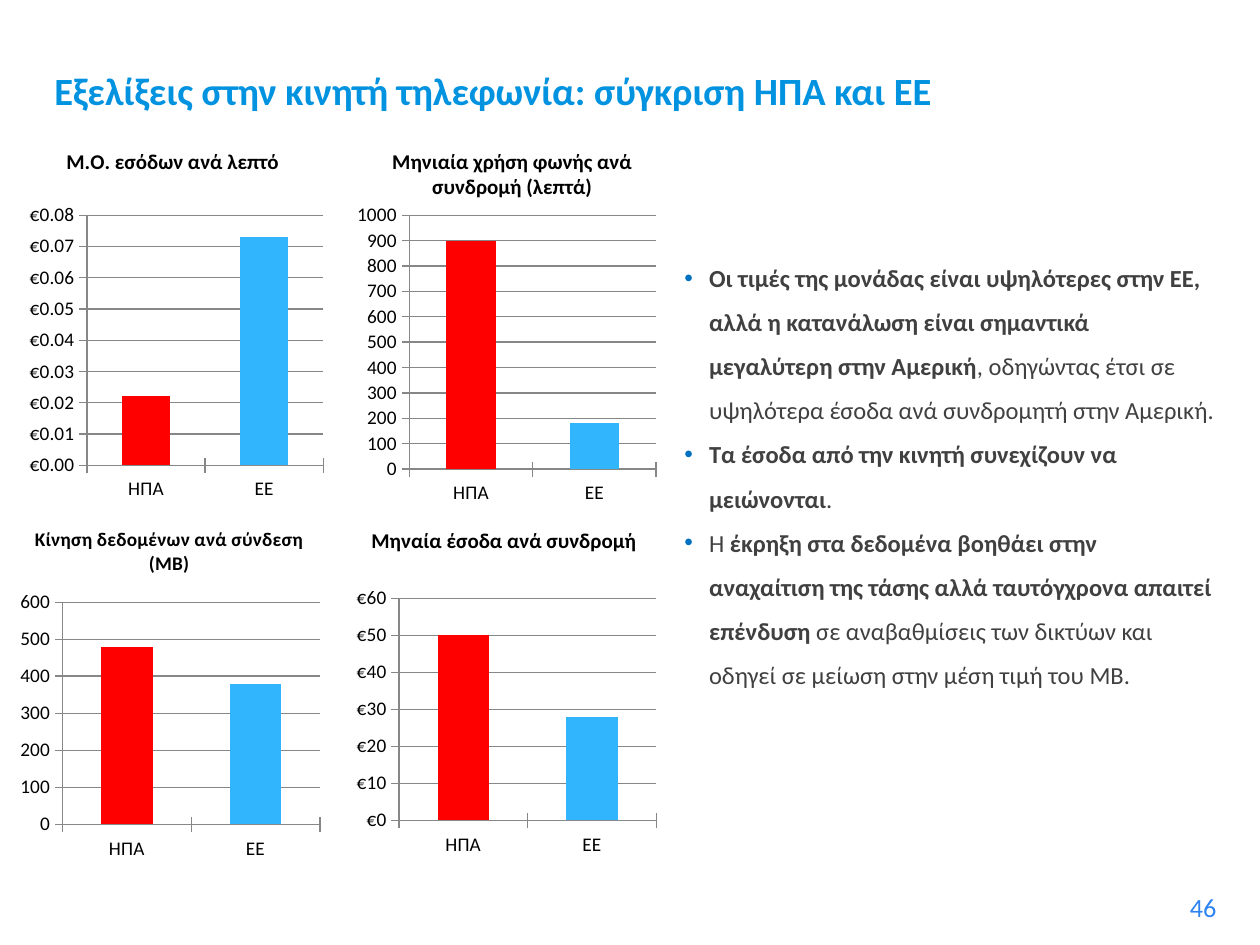
from lxml import etree
from pptx import Presentation
from pptx.chart.data import CategoryChartData
from pptx.dml.color import RGBColor
from pptx.enum.chart import XL_CHART_TYPE, XL_TICK_MARK
from pptx.enum.text import MSO_ANCHOR, MSO_AUTO_SIZE, PP_ALIGN
from pptx.oxml.ns import qn
from pptx.util import Cm, Pt

COLUMNS = XL_CHART_TYPE.COLUMN_CLUSTERED
TICK_CROSS = XL_TICK_MARK.CROSS
TOP, MIDDLE = MSO_ANCHOR.TOP, MSO_ANCHOR.MIDDLE
NO_AUTOFIT = MSO_AUTO_SIZE.NONE
LEFT, RIGHT = PP_ALIGN.LEFT, PP_ALIGN.RIGHT

FONT = "Calibri"
RED, BLUE, GRID = "FF0000", "31B6FD", "878787"
REGIONS = ["ΗΠΑ", "ΕΕ"]

# title, title size, title position, values, axis maximum, axis step, format, plot area
CHARTS = [
    ("Μ.Ο. εσόδων ανά λεπτό", 12, (0.18, 0.07), (0.022, 0.073),
     0.08, 0.01, '"€"#,##0.00', (0.25, 0.25, 0.68, 0.63)),
    ("Μηνιαία χρήση φωνής ανά συνδρομή (λεπτά)", 12, (0.15, 0.07), (900, 180),
     1000, 100, "General", (0.21, 0.25, 0.71, 0.64)),
    ("Κίνηση δεδομένων ανά σύνδεση (ΜΒ)", 11, (0.09, 0.12), (480, 380),
     600, 100, "General", (0.18, 0.32, 0.74, 0.56)),
    ("Μηναία έσοδα ανά συνδρομή", 12, (0.09, 0.12), (50, 28),
     60, 10, '"€"#,##0', (0.18, 0.31, 0.74, 0.56)),
]

# each point is a list of (text, bold)
POINTS = [
    [("Οι τιμές της μονάδας είναι υψηλότερες στην ΕΕ, αλλά η κατανάλωση είναι "
      "σημαντικά μεγαλύτερη στην Αμερική", True),
     (", οδηγώντας έτσι σε υψηλότερα έσοδα ανά συνδρομητή στην Αμερική.", False)],
    [("Τα έσοδα από την κινητή συνεχίζουν να μειώνονται", True), (".", False)],
    [("H ", False),
     ("έκρηξη στα δεδομένα βοηθάει στην αναχαίτιση της τάσης αλλά ταυτόγχρονα "
      "απαιτεί επένδυση ", True),
     ("σε αναβαθμίσεις των δικτύων και οδηγεί σε μείωση στην μέση τιμή του ΜΒ.", False)],
]


def color(value):
    return RGBColor.from_string(value)


def style_font(font, size, value, bold=False):
    font.name, font.size, font.bold = FONT, Pt(size), bold
    font.color.rgb = color(value)


def place(shape, box):
    shape.left, shape.top, shape.width, shape.height = map(Cm, box)


def set_layout(parent, position, index, inner=False):
    """Give a chart part a manual layout, in fractions of the chart."""
    old = parent.find(qn("c:layout"))
    if old is not None:
        parent.remove(old)
    layout = etree.Element(qn("c:layout"))
    manual = etree.SubElement(layout, qn("c:manualLayout"))
    settings = [("layoutTarget", "inner")] if inner else []
    settings += [("xMode", "edge"), ("yMode", "edge")]
    settings += zip("xywh", position)
    for name, value in settings:
        etree.SubElement(manual, qn("c:" + name)).set("val", str(value))
    parent.insert(index, layout)


def add_title(slide, box, text):
    title = slide.shapes.title
    place(title, box)
    frame = title.text_frame
    frame.text = text
    frame.auto_size, frame.vertical_anchor = NO_AUTOFIT, MIDDLE
    paragraph = frame.paragraphs[0]
    paragraph.alignment = LEFT
    style_font(paragraph.runs[0].font, 22, "0293E0", True)


def add_bullet(paragraph, value):
    properties = paragraph._p.get_or_add_pPr()
    properties.set("marL", str(Cm(0.5)))
    properties.set("indent", str(-Cm(0.5)))
    bullet_color = etree.SubElement(properties, qn("a:buClr"))
    etree.SubElement(bullet_color, qn("a:srgbClr")).set("val", value)
    etree.SubElement(properties, qn("a:buFont")).set("typeface", "Arial")
    etree.SubElement(properties, qn("a:buChar")).set("char", "•")


def add_points(slide, box, points):
    body = slide.placeholders[1]
    place(body, box)
    frame = body.text_frame
    frame.auto_size, frame.vertical_anchor = NO_AUTOFIT, TOP
    for index, parts in enumerate(points):
        paragraph = frame.add_paragraph() if index else frame.paragraphs[0]
        add_bullet(paragraph, "0070C0")
        paragraph.line_spacing, paragraph.space_before = 1.5, Pt(0)
        for text, bold in parts:
            run = paragraph.add_run()
            run.text = text
            style_font(run.font, 14, "404040", bold)


def style_axis(axis):
    axis.major_tick_mark = TICK_CROSS
    style_font(axis.tick_labels.font, 11, "000000")
    axis.format.line.color.rgb = color(GRID)


def add_column_chart(slide, box, title, title_size, title_position, values,
                     maximum, step, number_format, plot_area):
    data = CategoryChartData()
    data.categories = REGIONS
    data.add_series("Series 1", values)
    chart = slide.shapes.add_chart(COLUMNS, *map(Cm, box), data).chart
    style_font(chart.font, 10, "000000")
    chart.has_legend = False

    chart.has_title = True
    frame = chart.chart_title.text_frame
    frame.text = title
    style_font(frame.paragraphs[0].runs[0].font, title_size, "000000", True)
    chart.chart_title.include_in_layout = False
    chart_element = chart._chartSpace.chart
    set_layout(chart_element.find(qn("c:title")), title_position, 1)
    set_layout(chart_element.plotArea, plot_area, 0, inner=True)

    style_axis(chart.category_axis)
    axis = chart.value_axis
    style_axis(axis)
    axis.minimum_scale, axis.maximum_scale, axis.major_unit = 0, maximum, step
    axis.tick_labels.number_format = number_format
    axis.tick_labels.number_format_is_linked = False
    axis.has_major_gridlines = True
    axis.major_gridlines.format.line.color.rgb = color(GRID)

    plot = chart.plots[0]
    plot.gap_width, plot.vary_by_categories = 150, False
    series = plot.series[0]
    for item, value in ((series, BLUE), (series.points[0], RED)):
        item.format.fill.solid()
        item.format.fill.fore_color.rgb = color(value)


def add_chart_grid(slide, box, charts):
    """Place the charts two by two; neighbours overlap a little."""
    left, top, width, height = box
    chart_width, chart_height = 7.01, 8
    for index, chart in enumerate(charts):
        row, column = divmod(index, 2)
        add_column_chart(slide, (left + column * (width - chart_width),
                                 top + row * (height - chart_height),
                                 chart_width, chart_height), *chart)


def add_page_number(slide, box, number):
    frame = slide.shapes.add_textbox(*map(Cm, box)).text_frame
    frame.word_wrap, frame.vertical_anchor = True, MIDDLE
    frame.text = number
    paragraph = frame.paragraphs[0]
    paragraph.alignment = RIGHT
    style_font(paragraph.runs[0].font, 15, "2D83F4")


def main():
    presentation = Presentation()
    presentation.slide_width, presentation.slide_height = Cm(25.4), Cm(19.05)
    slide = presentation.slides.add_slide(presentation.slide_layouts[1])
    add_title(slide, (0.84, 0.64, 19.25, 2.34),
              "Εξελίξεις στην κινητή τηλεφωνία: σύγκριση ΗΠΑ και ΕΕ")
    add_points(slide, (13.54, 4.88, 11.23, 11.23), POINTS)
    add_chart_grid(slide, (0, 2.34, 13.79, 15.24), CHARTS)
    add_page_number(slide, (18.85, 17.78, 5.92, 1.02), "46")
    presentation.save("out.pptx")


if __name__ == "__main__":
    main()
